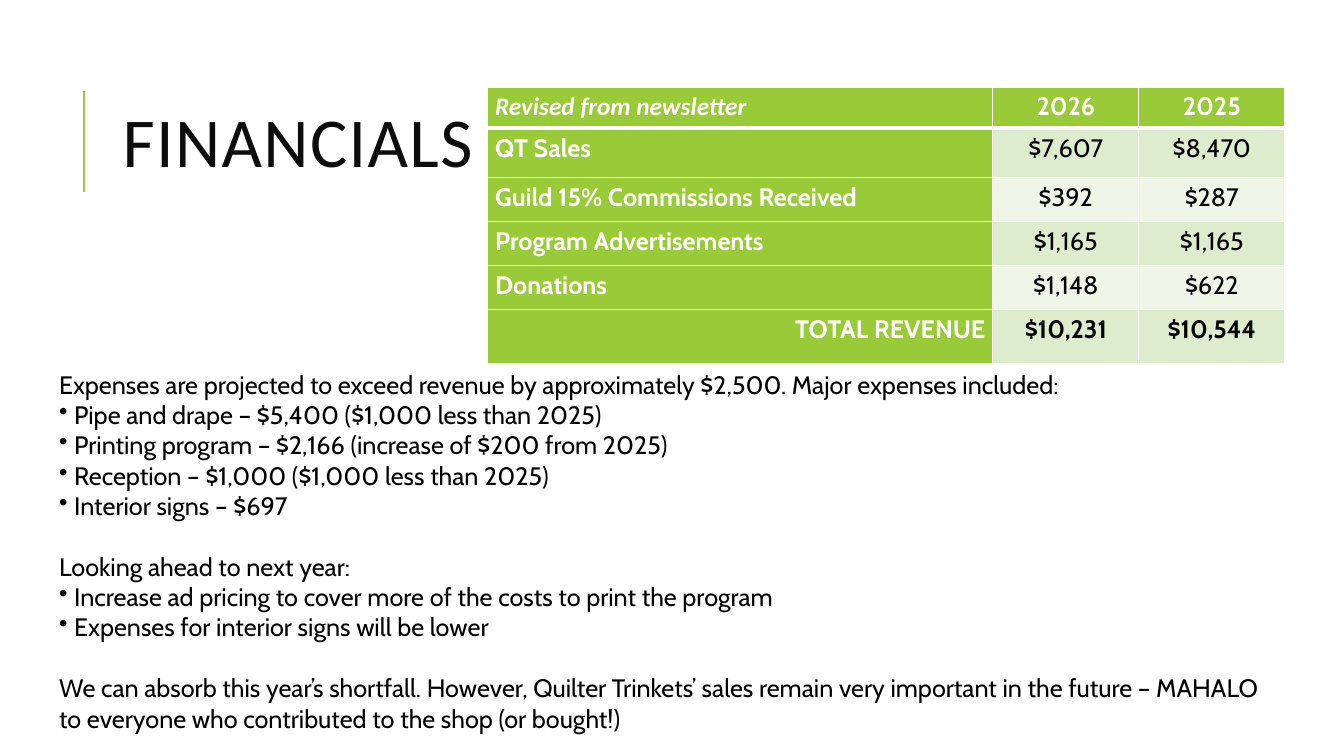
from dataclasses import dataclass

import pptx
import pptx.dml.color
import pptx.enum.shapes
import pptx.enum.text
import pptx.oxml.ns
import pptx.util
from lxml import etree

Cm = pptx.util.Cm
Pt = pptx.util.Pt
RGBColor = pptx.dml.color.RGBColor
ALIGN = pptx.enum.text.PP_ALIGN
ANCHOR = pptx.enum.text.MSO_ANCHOR
qn = pptx.oxml.ns.qn

GREEN = RGBColor(0x99, 0xCB, 0x38)
BAND_DARK = RGBColor(0xDE, 0xEC, 0xCE)
BAND_LIGHT = RGBColor(0xEF, 0xF6, 0xE8)
WHITE = RGBColor(0xFF, 0xFF, 0xFF)
BLACK = RGBColor(0x00, 0x00, 0x00)
TITLE_INK = RGBColor(0x0D, 0x0D, 0x0D)

BODY_FONT = "Cabin"
TITLE_FONT = "Calibri"
BODY_SIZE = Pt(18)
BLANK_LINE = Pt(21.9)
BULLET_INDENT = Cm(0.38)
COLUMN_WIDTHS = (12.73, 3.68, 3.68)


@dataclass
class RevenueRow:
    label: str
    current: str
    previous: str
    height: float


@dataclass
class Section:
    intro: str
    bullets: tuple[str, ...] = ()


REVENUE = (
    RevenueRow("Revised from newsletter", "2026", "2025", 1.04),
    RevenueRow("QT Sales", "$7,607", "$8,470", 1.25),
    RevenueRow("Guild 15% Commissions Received", "$392", "$287", 1.11),
    RevenueRow("Program Advertisements", "$1,165", "$1,165", 1.1),
    RevenueRow("Donations", "$1,148", "$622", 1.1),
    RevenueRow("TOTAL REVENUE", "$10,231", "$10,544", 1.37),
)

SECTIONS = (
    Section(
        "Expenses are projected to exceed revenue by approximately $2,500. "
        "Major expenses included:",
        (
            "Pipe and drape – $5,400 ($1,000 less than 2025)",
            "Printing program – $2,166 (increase of $200 from 2025)",
            "Reception – $1,000 ($1,000 less than 2025)",
            "Interior signs – $697",
        ),
    ),
    Section(
        "Looking ahead to next year:",
        (
            "Increase ad pricing to cover more of the costs to print the program",
            "Expenses for interior signs will be lower",
        ),
    ),
    Section(
        "We can absorb this year’s shortfall. However, Quilter Trinkets’ sales "
        "remain very important in the future – MAHALO to everyone who "
        "contributed to the shop (or bought!)"
    ),
)


def add_run(p, text: str, font: str, size: int, color: RGBColor):
    r = p.add_run()
    r.text = text
    r.font.name = font
    r.font.size = size
    r.font.color.rgb = color
    return r


def add_box(slide, left: float, top: float, width: float, height: float):
    box = slide.shapes.add_textbox(Cm(left), Cm(top), Cm(width), Cm(height))
    tf = box.text_frame
    tf.word_wrap = True
    tf.vertical_anchor = ANCHOR.MIDDLE
    return tf


def add_title(slide) -> None:
    # Accent rule
    rule = slide.shapes.add_connector(
        pptx.enum.shapes.MSO_CONNECTOR.STRAIGHT, Cm(2.12), Cm(4.83), Cm(2.12), Cm(2.3)
    )
    rule.line.color.rgb = GREEN
    rule.line.width = Pt(1.5)
    etree.SubElement(rule._element.spPr, qn("a:effectLst"))

    # Heading
    p = add_box(slide, 2.84, 1.63, 27, 4.17).paragraphs[0]
    p.line_spacing = 0.8
    r = add_run(p, "FINANCIALS", TITLE_FONT, Pt(50), TITLE_INK)
    r.font._element.set("spc", "100")


def set_borders(cell, is_header: bool) -> None:
    tcPr = cell._tc.get_or_add_tcPr()
    for side in ("lnL", "lnR", "lnT", "lnB"):
        width = Pt(3) if is_header and side == "lnB" else Pt(1)
        ln = etree.SubElement(tcPr, qn(f"a:{side}"), w=str(width))
        fill = etree.SubElement(ln, qn("a:solidFill"))
        etree.SubElement(fill, qn("a:srgbClr"), val=str(WHITE))


def add_revenue_table(slide) -> None:
    table = slide.shapes.add_table(
        len(REVENUE), len(COLUMN_WIDTHS), Cm(12.29), Cm(2.19),
        Cm(sum(COLUMN_WIDTHS)), Cm(sum(row.height for row in REVENUE)),
    ).table
    for column, width in zip(table.columns, COLUMN_WIDTHS):
        column.width = Cm(width)

    last = len(REVENUE) - 1
    for i, row in enumerate(REVENUE):
        table.rows[i].height = Cm(row.height)
        band = BAND_DARK if i % 2 else BAND_LIGHT
        for j, text in enumerate((row.label, row.current, row.previous)):
            is_heading = i == 0 or j == 0
            is_note = i == 0 and j == 0
            cell = table.cell(i, j)
            set_borders(cell, i == 0)
            cell.fill.solid()
            cell.fill.fore_color.rgb = GREEN if is_heading else band
            cell.margin_left = cell.margin_right = Cm(0.19)
            cell.margin_top = cell.margin_bottom = 0

            p = cell.text_frame.paragraphs[0]
            p.line_spacing = 1.15
            p.space_after = Pt(8)
            if j:
                p.alignment = ALIGN.CENTER
            else:
                p.alignment = ALIGN.RIGHT if i == last else ALIGN.LEFT
            r = add_run(p, text, TITLE_FONT if is_note else BODY_FONT,
                        BODY_SIZE, WHITE if is_heading else BLACK)
            r.font.bold = is_heading or i == last
            r.font.italic = is_note


def add_commentary(slide) -> None:
    tf = add_box(slide, 1.24, 9.14, 31.14, 9.5)
    for i, section in enumerate(SECTIONS):
        p = tf.add_paragraph() if i else tf.paragraphs[0]
        if i:
            p.space_before = BLANK_LINE
        add_run(p, section.intro, BODY_FONT, BODY_SIZE, BLACK)
        for text in section.bullets:
            p = tf.add_paragraph()
            pPr = p._p.get_or_add_pPr()
            pPr.set("marL", str(BULLET_INDENT))
            pPr.set("indent", str(-BULLET_INDENT))
            etree.SubElement(pPr, qn("a:buChar"), char="•")
            add_run(p, text, BODY_FONT, BODY_SIZE, BLACK)


def main() -> None:
    prs = pptx.Presentation()
    prs.slide_width = Cm(33.87)
    prs.slide_height = Cm(19.05)
    slide = prs.slides.add_slide(prs.slide_layouts[6])
    add_title(slide)
    add_revenue_table(slide)
    add_commentary(slide)
    prs.save("out.pptx")


if __name__ == "__main__":
    main()
